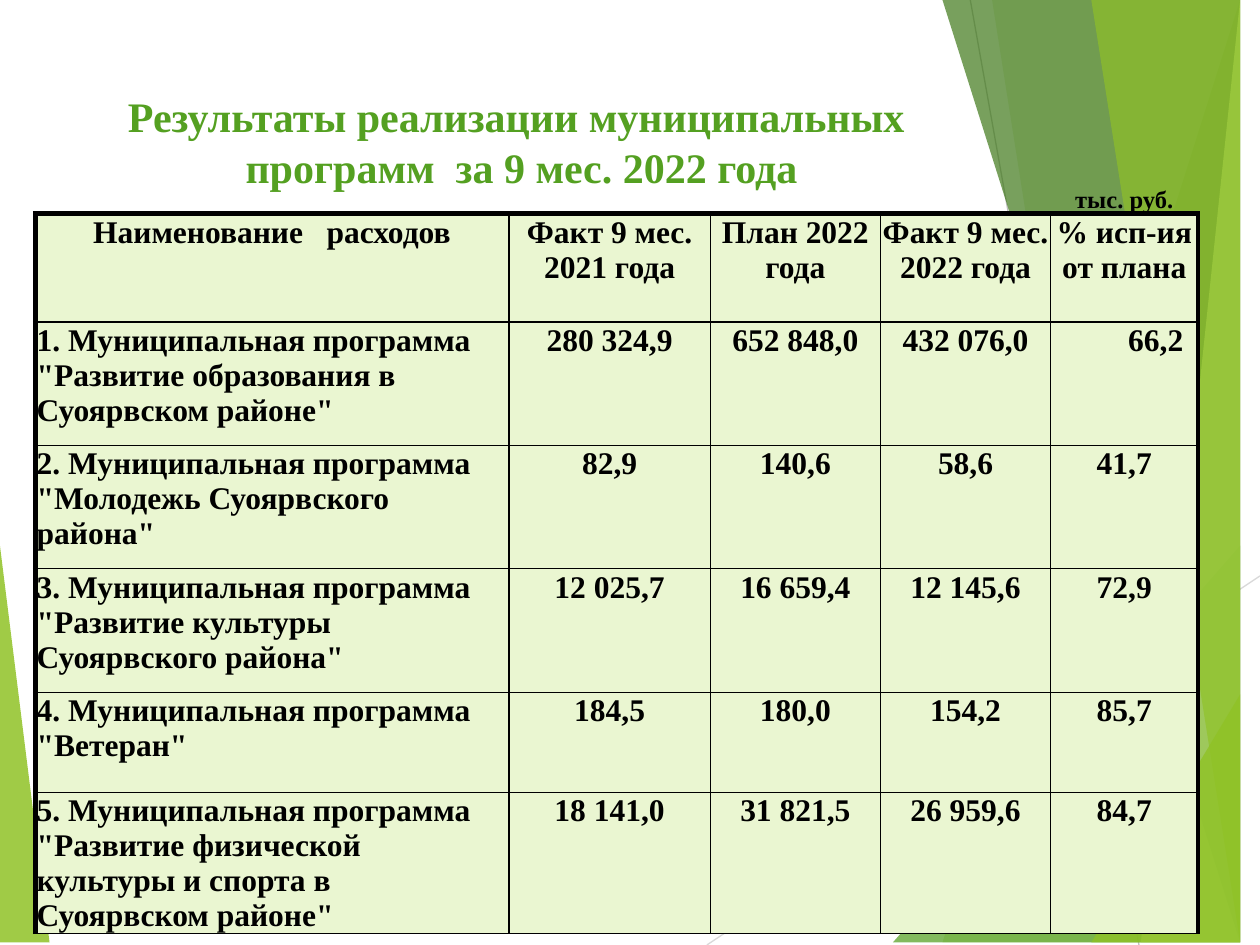
from dataclasses import dataclass

from lxml.etree import SubElement as Sub
from pptx import Presentation
from pptx.dml.color import RGBColor as Rgb
from pptx.enum.shapes import MSO_CONNECTOR as Link
from pptx.enum.text import MSO_ANCHOR as Anchor, PP_ALIGN as Align
from pptx.oxml.ns import qn
from pptx.util import Cm, Pt


@dataclass(frozen=True)
class Theme:
    """Colours, font and type sizes of the slide."""
    lime: str = "90C226"
    green: str = "54A021"
    dark: str = "3F7819"
    pale: str = "C0E474"
    cell: str = "EAF6D1"
    ink: str = "000000"
    font: str = "Times New Roman"
    head: int = 24
    text: int = 18
    unit: int = 14


THEME = Theme()
WIDE, HIGH = 25.4, 19.05
COLS = [9.55, 4.06, 3.43, 3.43, 2.97]
ROWS = [0.41, 2.18, 2.49, 2.49, 2.49, 2.01, 2.54]
EDGES_X = [3, 1, 1, 1, 1, 3]
EDGES_Y = [0, 3, 1, 1, 0.5, 0.5, 0.5, 0.5]
DATA = [
    ["Наименование   расходов", "Факт 9 мес. 2021 года", "План 2022 года",
     "Факт 9 мес. 2022 года", "% исп-ия от плана"],
    ['1. Муниципальная программа "Развитие образования в Суоярвском районе"',
     "280 324,9", "652 848,0", "432 076,0", "66,2"],
    ['2. Муниципальная программа "Молодежь Суоярвского района"',
     "82,9", "140,6", "58,6", "41,7"],
    ['3. Муниципальная программа "Развитие культуры Суоярвского района"',
     "12 025,7", "16 659,4", "12 145,6", "72,9"],
    ['4. Муниципальная программа "Ветеран"',
     "184,5", "180,0", "154,2", "85,7"],
    ['5. Муниципальная программа "Развитие физической культуры и спорта '
     'в Суоярвском районе"', "18 141,0", "31 821,5", "26 959,6", "84,7"],
]


def add_run(para, text, size, color):
    """Add one bold run to a paragraph."""
    run = para.add_run()
    run.text = text
    font = run.font
    font.name, font.size, font.bold = THEME.font, Pt(size), True
    font.color.rgb = Rgb.from_string(color)


def add_facet(slide, points, color, alpha):
    """Draw a translucent polygon."""
    pen = slide.shapes.build_freeform(*points[0], scale=Cm(1))
    pen.add_line_segments(points[1:], close=True)
    shape = pen.convert_to_shape()
    shape.shadow.inherit = False
    shape.line.fill.background()
    shape.fill.solid()
    shape.fill.fore_color.rgb = Rgb.from_string(color)
    tint = shape._element.spPr.find(qn("a:solidFill"))[0]
    Sub(tint, qn("a:alpha"), val=str(alpha * 1000))


def add_wedge(slide, top, base, color, alpha):
    """Draw a full-height facet that reaches the right edge."""
    points = [(top, 0), (base, HIGH), (WIDE, HIGH), (WIDE, 0)]
    add_facet(slide, points, color, alpha)


def add_corner(slide, base, top, color, alpha):
    """Draw a triangle in the lower right corner."""
    points = [(base, HIGH), (WIDE, top), (WIDE, HIGH)]
    add_facet(slide, points, color, alpha)


def add_ray(slide, start, end, color):
    """Draw a thin straight line."""
    ends = [Cm(n) for n in (*start, *end)]
    line = slide.shapes.add_connector(Link.STRAIGHT, *ends)
    line.line.color.rgb = Rgb.from_string(color)
    line.line.width = Pt(0.75)
    Sub(line._element.spPr, qn("a:effectLst"))


def add_decor(slide):
    """Draw the green facets behind the content."""
    add_facet(slide, [(0, 11.15), (1.24, HIGH), (0, HIGH)], THEME.lime, 85)
    add_ray(slide, (14.25, HIGH), (WIDE, 11.61), "D9D9D9")
    add_ray(slide, (19.56, 0), (22.96, HIGH), "BFBFBF")
    add_wedge(slide, 24.77, 19.15, THEME.lime, 30)
    add_wedge(slide, 20.02, 23.34, THEME.lime, 20)
    add_corner(slide, 18.44, 10.9, THEME.green, 72)
    add_wedge(slide, 19.48, 24.64, THEME.dark, 70)
    add_wedge(slide, 24.92, 23.04, THEME.pale, 70)
    add_wedge(slide, 22.43, 25.04, THEME.lime, 65)
    add_corner(slide, 22.38, 13.59, THEME.lime, 80)


def set_title(slide, lines):
    """Place and fill the title above the facets."""
    title = slide.shapes.title
    slide.shapes._spTree.append(title._element)
    title.left, title.top = Cm(1.7), Cm(1.7)
    title.width, title.height = Cm(17.63), Cm(3.66)
    frame = title.text_frame
    frame.word_wrap, frame.vertical_anchor = True, Anchor.TOP
    para = frame.paragraphs[0]
    para.alignment = Align.CENTER
    for i, line in enumerate(lines):
        if i:
            para.add_line_break()
        add_run(para, line, THEME.head, THEME.green)


def set_edges(cell, sizes):
    """Set left, right, top and bottom borders, hiding those of zero width."""
    props = cell._tc.get_or_add_tcPr()
    for i, (side, size) in enumerate(zip("LRTB", sizes)):
        edge = props.makeelement(qn(f"a:ln{side}"), w=str(Pt(size)))
        props.insert(i, edge)
        if size:
            fill = Sub(edge, qn("a:solidFill"))
            Sub(fill, qn("a:srgbClr"), val=THEME.ink)
        else:
            Sub(edge, qn("a:noFill"))


def fill_cell(cell, text, size, align):
    """Set the margins and the text of a cell."""
    cell.margin_left = cell.margin_right = cell.margin_top = Cm(0.03)
    cell.margin_bottom = 0
    para = cell.text_frame.paragraphs[0]
    para.alignment = align
    if text:
        add_run(para, text, size, THEME.ink)
    else:
        para._p.get_or_add_endParaRPr().set("sz", "800")
    return para


def add_grid(slide):
    """Build the table of programmes with its unit line."""
    frame = slide.shapes.add_table(
        len(ROWS), len(COLS), Cm(0.71), Cm(3.73), Cm(sum(COLS)), Cm(sum(ROWS)))
    grid = frame.table
    grid.first_row = grid.horz_banding = False
    for col, width in zip(grid.columns, COLS):
        col.width = Cm(width)
    for row, height in zip(grid.rows, ROWS):
        row.height = Cm(height)
    for c in range(len(COLS)):
        cell = grid.cell(0, c)
        text = " тыс. руб. " if c == len(COLS) - 1 else ""
        fill_cell(cell, text, THEME.unit, Align.CENTER)
        cell.vertical_anchor = Anchor.BOTTOM
        cell.fill.background()
        set_edges(cell, (0, 0, *EDGES_Y[:2]))
    grid.cell(0, 1).merge(grid.cell(0, 3))
    for r, texts in enumerate(DATA, 1):
        for c, text in enumerate(texts):
            cell = grid.cell(r, c)
            align = Align.LEFT if r > 1 and c == 0 else Align.CENTER
            para = fill_cell(cell, text, THEME.text, align)
            if text == "66,2":
                para.level = 1
                para._p.get_or_add_pPr().set("marL", str(Cm(1.27)))
            cell.fill.solid()
            cell.fill.fore_color.rgb = Rgb.from_string(THEME.cell)
            set_edges(cell, EDGES_X[c:c + 2] + EDGES_Y[r:r + 2])


def main():
    """Build and save the slide."""
    deck = Presentation()
    deck.slide_width, deck.slide_height = Cm(WIDE), Cm(HIGH)
    slide = deck.slides.add_slide(deck.slide_layouts[5])
    add_decor(slide)
    set_title(slide, ["Результаты реализации муниципальных ",
                      "программ  за 9 мес. 2022 года"])
    add_grid(slide)
    deck.save("out.pptx")


if __name__ == "__main__":
    main()
